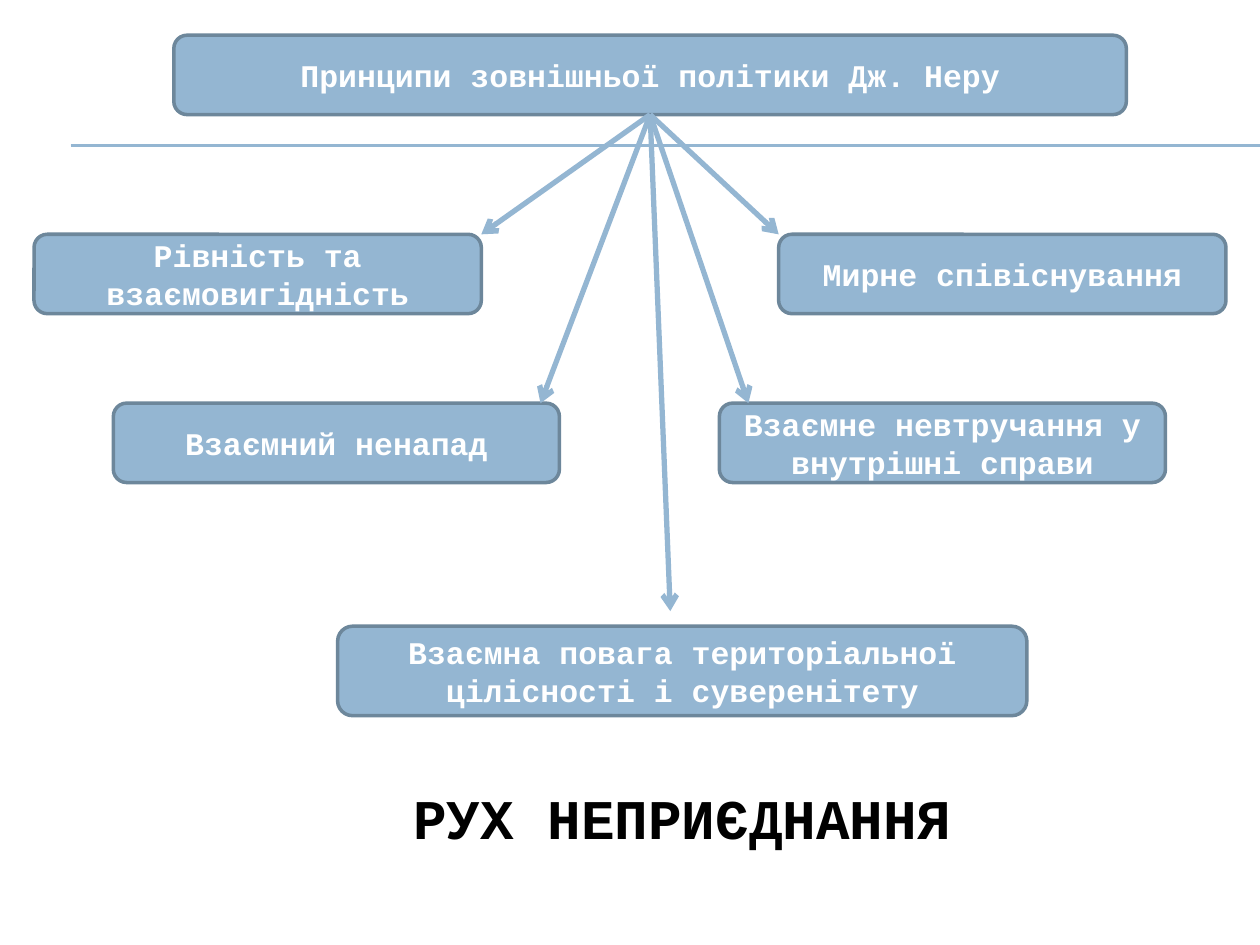
from lxml import etree
from pptx import Presentation
from pptx.dml.color import RGBColor
from pptx.enum.shapes import MSO_CONNECTOR as Line, MSO_SHAPE as Shape
from pptx.enum.text import MSO_ANCHOR as Anchor, MSO_AUTO_SIZE as AutoSize, PP_ALIGN as Align
from pptx.oxml.ns import qn
from pptx.util import Inches, Pt

WIDTH, HEIGHT = 10, 7.5
COLUMNS, ROWS = 100, 75


def color(value):
    return RGBColor.from_string(value)


class Diagram:
    """Style and current slide; lengths are grid columns and rows."""
    font = "Courier New"
    blue, edge, white, black = "94B6D2", "6D879B", "FFFFFF", "000000"

    def __init__(self, slide):
        self.slide = slide

    def grid(self, column, row):
        return Inches(column * WIDTH / COLUMNS), Inches(row * HEIGHT / ROWS)

    def set_text(self, frame, text, size, ink):
        frame.word_wrap = True
        frame.text = text
        paragraph = frame.paragraphs[0]
        paragraph.alignment = Align.CENTER
        font = paragraph.runs[0].font
        font.name, font.size, font.bold = self.font, Pt(size), True
        font.color.rgb = color(ink)

    def box(self, text, column, row, width, height=6.3):
        box = self.slide.shapes.add_shape(
            Shape.ROUNDED_RECTANGLE, *self.grid(column, row), *self.grid(width, height))
        box.shadow.inherit = False
        box.fill.solid()
        box.fill.fore_color.rgb = color(self.blue)
        box.line.color.rgb = color(self.edge)
        box.line.width = Pt(2)
        box.text_frame.vertical_anchor = Anchor.MIDDLE
        self.set_text(box.text_frame, text, 18, self.white)
        return box

    def line(self, start, end, weight):
        line = self.slide.shapes.add_connector(
            Line.STRAIGHT, *self.grid(*start), *self.grid(*end))
        line.line.color.rgb = color(self.blue)
        line.line.width = Pt(weight)
        etree.SubElement(line._element.spPr, qn("a:effectLst"))
        return line

    def arrow(self, source, end):
        arrow = self.line((0, 0), end, 3)
        arrow.begin_connect(source, 2)
        outline = arrow._element.spPr.find(qn("a:ln"))
        etree.SubElement(outline, qn("a:tailEnd"), type="arrow")

    def caption(self, text, column, row, width, height):
        caption = self.slide.shapes.add_textbox(
            *self.grid(column, row), *self.grid(width, height))
        self.set_text(caption.text_frame, text, 32, self.black)
        caption.text_frame.auto_size = AutoSize.SHAPE_TO_FIT_TEXT


def main():
    deck = Presentation()
    deck.slide_width, deck.slide_height = Inches(WIDTH), Inches(HEIGHT)
    diagram = Diagram(deck.slides.add_slide(deck.slide_layouts[6]))

    # Double rule behind the diagram
    for row in (11.5, 11.6):
        diagram.line((5.6, row), (COLUMNS, row), 0.75)

    # Heading and the five principles: text, box, arrow tip
    heading = diagram.box("Принципи зовнішньої політики Дж. Неру", 13.8, 2.8, 75.6)
    upper, middle = 18.6, 32
    principles = [
        ("Рівність та взаємовигідність", (2.7, upper, 35.5), (38.2, upper)),
        ("Взаємний ненапад", (9, middle, 35.4), (42.9, middle)),
        ("Мирне співіснування", (61.8, upper, 35.5), (61.8, upper)),
        ("Взаємне невтручання у внутрішні справи", (57.1, middle, 35.4), (59.4, middle)),
        ("Взаємна повага територіальної цілісності і суверенітету",
         (26.8, 49.7, 54.7, 7.1), (53.2, 48.5)),
    ]
    for text, place, _ in principles:
        diagram.box(text, *place)
    for _, _, tip in principles:
        diagram.arrow(heading, tip)

    # Conclusion
    diagram.caption("РУХ НЕПРИЄДНАННЯ", 14.4, 61.7, 79.5, 6.4)

    deck.save("out.pptx")


if __name__ == "__main__":
    main()
